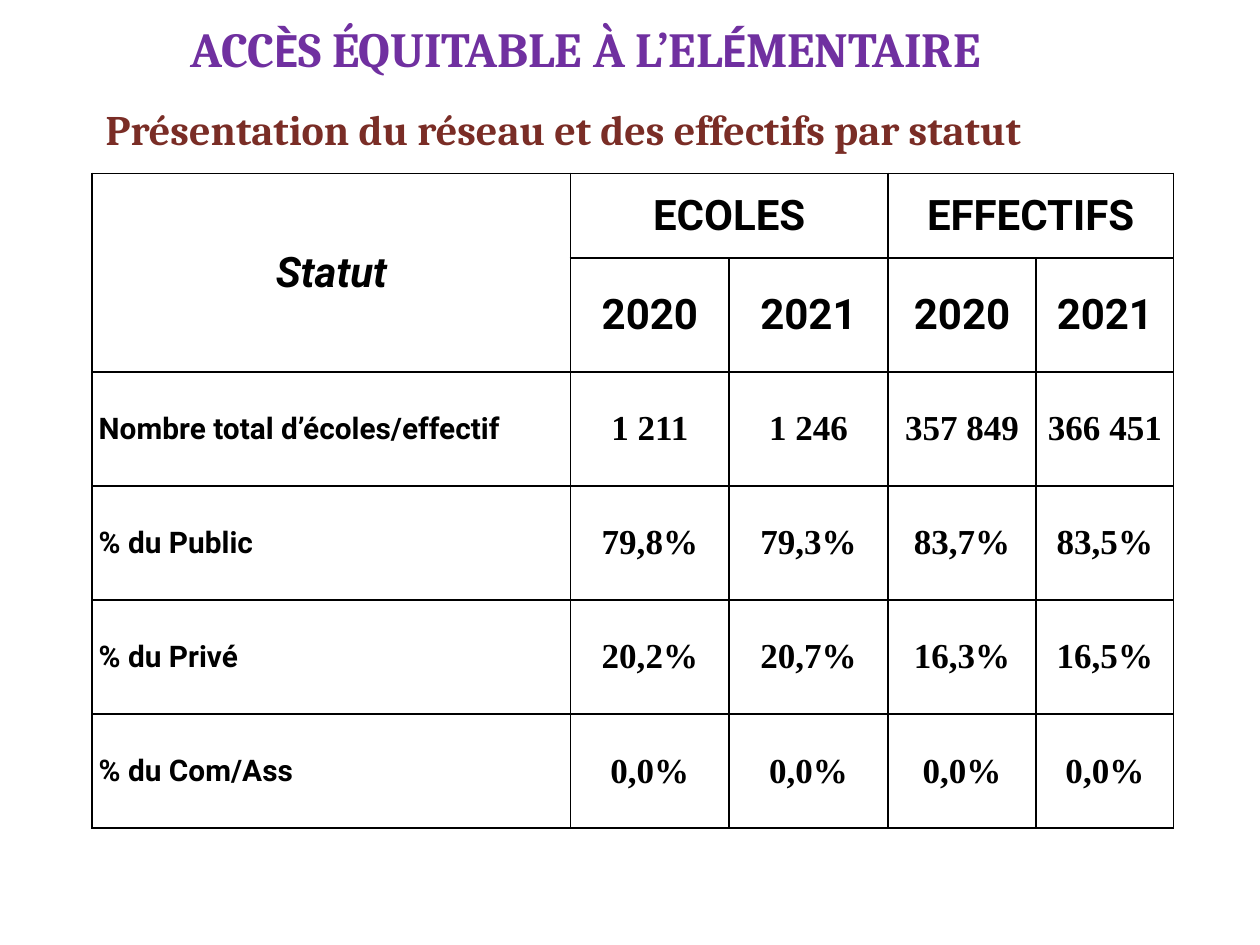
from dataclasses import dataclass

from lxml import etree
from pptx import Presentation
from pptx.dml.color import RGBColor
from pptx.enum.text import MSO_ANCHOR, MSO_AUTO_SIZE, PP_ALIGN
from pptx.oxml.ns import qn
from pptx.util import Cm, Pt

MIDDLE = MSO_ANCHOR.MIDDLE
FIT_SHAPE = MSO_AUTO_SIZE.SHAPE_TO_FIT_TEXT
LEFT, CENTER = PP_ALIGN.LEFT, PP_ALIGN.CENTER


@dataclass(frozen=True)
class Theme:
    """Colours, fonts and type sizes of the slide."""
    purple: str = "7030A0"
    brown: str = "7A2D26"
    black: str = "000000"
    heading: str = "Cambria"
    accent: str = "Calibri"
    label: str = "Roboto"
    figure: str = "Times New Roman"
    title_size: int = 28
    head_size: int = 24
    figure_size: int = 20
    label_size: int = 17
    border: float = 1.13


THEME = Theme()

TITLE = [
    ("ACC", THEME.heading), ("È", THEME.accent),
    ("S ÉQUITABLE À L’EL", THEME.heading), ("É", THEME.accent),
    ("MENTAIRE", THEME.heading),
]
SUBTITLE = [("Présentation du réseau et des effectifs par statut", THEME.heading)]
ROWS = [
    ["Statut", "ECOLES", "", "EFFECTIFS", ""],
    ["", "2020", "2021", "2020", "2021"],
    ["Nombre total d’écoles/effectif", "1 211", "1 246", "357 849", "366 451"],
    ["% du Public", "79,8%", "79,3%", "83,7%", "83,5%"],
    ["% du Privé", "20,2%", "20,7%", "16,3%", "16,5%"],
    ["% du Com/Ass", "0,0%", "0,0%", "0,0%", "0,0%"],
]
HEADER_ROWS = 2
MERGES = [((0, 0), (1, 0)), ((0, 1), (0, 2)), ((0, 3), (0, 4))]
COL_SHARES = [3.8, 1.26, 1.26, 1.18, 1.09]
FIRST_ROW = 1.7


def style_run(r, font, size, color, italic=False):
    """Format one bold run."""
    r.font.name, r.font.size = font, Pt(size)
    r.font.bold, r.font.italic = True, italic
    r.font.color.rgb = RGBColor.from_string(color)


def add_heading(s, box, parts, size, color, align, wrap):
    """Place a one-line heading made of (text, font) parts in the box."""
    sp = s.shapes.add_textbox(*map(Cm, box))
    tf = sp.text_frame
    tf.word_wrap, tf.auto_size, tf.vertical_anchor = wrap, FIT_SHAPE, MIDDLE
    p = tf.paragraphs[0]
    p.alignment = align
    for text, font in parts:
        r = p.add_run()
        r.text = text
        style_run(r, font, size, color)


def add_borders(cell):
    """Draw a solid line on the four sides of a cell."""
    tc_pr = cell._tc.get_or_add_tcPr()
    for i, side in enumerate(("a:lnL", "a:lnR", "a:lnT", "a:lnB")):
        ln = etree.Element(qn(side), w=str(Pt(THEME.border)))
        fill = etree.SubElement(ln, qn("a:solidFill"))
        etree.SubElement(fill, qn("a:srgbClr"), val=THEME.black)
        tc_pr.insert(i, ln)


def fill_cell(cell, text, row, col):
    """Write a cell and style it by its place in the table."""
    cell.fill.background()
    add_borders(cell)
    cell.vertical_anchor = MIDDLE
    cell.margin_left = cell.margin_right = Cm(0.13)
    cell.margin_top = cell.margin_bottom = 0
    if row < HEADER_ROWS:
        font, size = THEME.label, THEME.head_size
    elif col == 0:
        font, size = THEME.label, THEME.label_size
    else:
        font, size = THEME.figure, THEME.figure_size
    p = cell.text_frame.paragraphs[0]
    p.text = text
    p.alignment = LEFT if col == 0 and row >= HEADER_ROWS else CENTER
    for r in p.runs:
        style_run(r, font, size, THEME.black, italic=row == col == 0)


def add_status_table(s, box):
    """Place the table of schools and enrolment by status in the box."""
    width, height = box[2:]
    frame = s.shapes.add_table(len(ROWS), len(COL_SHARES), *map(Cm, box))
    table = frame.table
    for column, share in zip(table.columns, COL_SHARES):
        column.width = Cm(width * share / sum(COL_SHARES))
    for i, row in enumerate(table.rows):
        row.height = Cm((height - FIRST_ROW) / (len(ROWS) - 1) if i else FIRST_ROW)
    for i, texts in enumerate(ROWS):
        for j, text in enumerate(texts):
            fill_cell(table.cell(i, j), text, i, j)
    for start, end in MERGES:
        table.cell(*start).merge(table.cell(*end))


def main():
    """Build the slide and save it."""
    prs = Presentation()
    prs.slide_width, prs.slide_height = Cm(25.4), Cm(19.05)
    s = prs.slides.add_slide(prs.slide_layouts[6])
    add_heading(s, (3.33, 0.25, 16.94, 1.45), TITLE,
                THEME.title_size, THEME.purple, CENTER, False)
    add_heading(s, (1.88, 1.96, 20.02, 1.27), SUBTITLE,
                THEME.head_size, THEME.brown, LEFT, True)
    add_status_table(s, (1.86, 3.5, 21.8, 13.2))
    prs.save("out.pptx")


if __name__ == "__main__":
    main()
